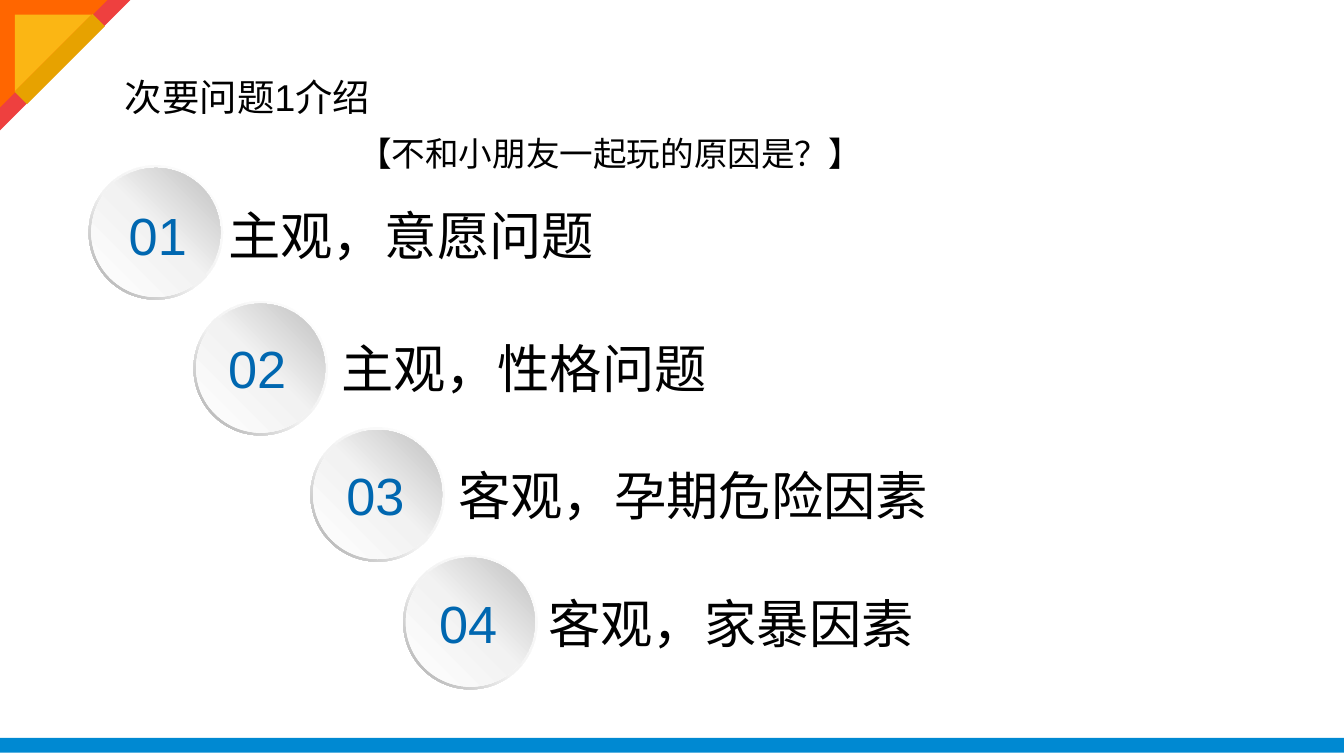
"""Build a slide listing four reasons as a staircase of numbered discs."""
from copy import deepcopy

from pptx import Presentation
from pptx.dml.color import RGBColor
from pptx.enum.shapes import MSO_SHAPE
from pptx.enum.text import MSO_AUTO_SIZE, PP_ALIGN
from pptx.util import Inches, Pt

RECTANGLE = MSO_SHAPE.RECTANGLE
TRIANGLE = MSO_SHAPE.RIGHT_TRIANGLE
DONUT = MSO_SHAPE.DONUT
OVAL = MSO_SHAPE.OVAL
FIT_SHAPE = MSO_AUTO_SIZE.SHAPE_TO_FIT_TEXT
CENTER = PP_ALIGN.CENTER

COLORS = {
    "text": "000000", "number": "0067B0", "footer": "0089D2",
    "red": "EE403F", "orange": "FF6600", "yellow": "FBB614", "gold": "E7A200",
    "white": "FFFFFF", "light": "F2F2F2", "rim": "A6A6A6", "disc": "BFBFBF",
}


def add_filled(shapes, kind, box, stops, angle=0):
    shape = shapes.add_shape(kind, *map(Inches, box))
    shape.shadow.inherit = False
    shape.line.fill.background()
    if len(stops) == 1:
        shape.fill.solid()
        shape.fill.fore_color.rgb = RGBColor.from_string(COLORS[stops[0][1]])
        return shape
    shape.fill.gradient()
    shape.fill.gradient_angle = angle
    stop_list = shape._element.spPr.find(".//{*}gsLst")
    stop_list.append(deepcopy(stop_list[-1]))
    for stop, (position, color) in zip(shape.fill.gradient_stops, stops):
        stop.position = position
        stop.color.rgb = RGBColor.from_string(COLORS[color])
    return shape


def add_label(shapes, box, text, size, font_name, color="text", wrap=True):
    label = shapes.add_textbox(*map(Inches, box))
    frame = label.text_frame
    frame.word_wrap = wrap
    frame.auto_size = FIT_SHAPE
    frame.text = text
    font = frame.paragraphs[0].runs[0].font
    font.size = Pt(size)
    font.name = font_name
    font.color.rgb = RGBColor.from_string(COLORS[color])
    return frame


presentation = Presentation()
presentation.slide_width = Inches(10)
presentation.slide_height = Inches(10) * 9 // 16
slide = presentation.slides.add_slide(presentation.slide_layouts[6])

title = add_label(slide.shapes, (0.86, 0.51, 1.97, 0.43), "次要问题1介绍", 20, "Arial")
question = add_label(slide.shapes, (0.61, 0.86, 7.86, 0.46),
                     "【不和小朋友一起玩的原因是？】", 18, "Arial")
question.paragraphs[0].alignment = CENTER
question.paragraphs[0].line_spacing = 1.3
for frame in (title, question):
    frame.margin_left = frame.margin_right = Inches(0.07)
    frame.margin_top = frame.margin_bottom = Inches(0.04)

decorations = [
    (RECTANGLE, (0, 5.49, 10, 0.11), 0, "footer"),
    (TRIANGLE, (0, 0, 0.97, 0.97), 90, "red"),
    (TRIANGLE, (0, 0, 0.8, 0.8), 90, "orange"),
    (TRIANGLE, (0.11, 0.11, 0.57, 0.57), 90, "yellow"),
    (RECTANGLE, (0.38, 0.03, 0.13, 0.82), 45, "gold"),
]
for kind, box, rotation, color in decorations:
    add_filled(slide.shapes, kind, box, [(0, color)]).rotation = rotation

reasons = [
    (0.66, 1.23, 0.86, 1.46, 1.6, 2.98, "主观，意愿问题"),
    (1.44, 2.24, 1.6, 2.45, 2.44, 2.98, "主观，性格问题"),
    (2.31, 3.18, 2.48, 3.4, 3.31, 5.29, "客观，孕期危险因素"),
    (3, 4.13, 3.17, 4.35, 3.98, 3.65, "客观，家暴因素"),
]
rim_stops = [(0, "white"), (0.55, "light"), (1, "rim")]
disc_stops = [(0, "white"), (0.51, "light"), (1, "disc")]
for index, (left, top, number_left, text_top, text_left, width, reason) in enumerate(reasons, 1):
    badge = slide.shapes.add_group_shape().shapes
    rim = add_filled(badge, DONUT, (left, top, 1, 1), rim_stops, 225)
    rim.adjustments[0] = 0.05
    add_filled(badge, OVAL, (left + 0.02, top + 0.02, 0.96, 0.96), disc_stops, 45)
    add_label(badge, (number_left, text_top, 0.66, 0.57), f"{index:02}", 28, "Arial", "number", False)
    add_label(slide.shapes, (text_left, text_top, width, 0.57), reason, 28, "Calibri")

presentation.save("out.pptx")
